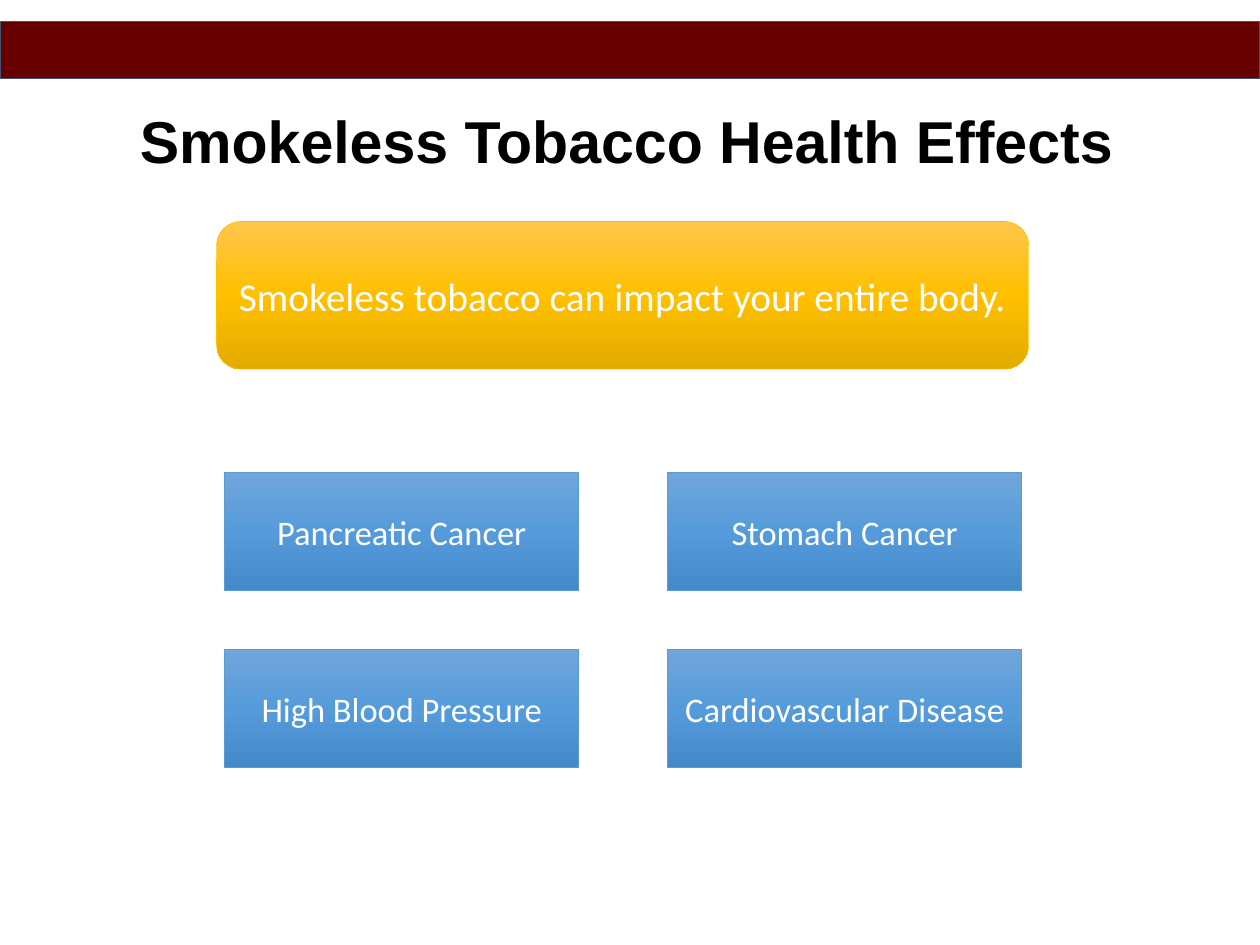
"""Builds the slide on the health effects of smokeless tobacco."""
from copy import deepcopy

from pptx import Presentation
from pptx import util as u
from pptx.dml.color import RGBColor
from pptx.enum import shapes, text
from pptx.oxml.ns import qn

EMU_PER_PX = 10160
WIDTH, HEIGHT = 1280, 960

BLACK = RGBColor(0x00, 0x00, 0x00)
WHITE = RGBColor(0xFF, 0xFF, 0xFF)
MAROON = RGBColor(0x66, 0x00, 0x00)
SLATE = RGBColor(0x44, 0x54, 0x6A)
GOLD = RGBColor(0xFF, 0xC0, 0x00)
BLUE = RGBColor(0x5B, 0x9B, 0xD5)
GOLD_SHADES = (RGBColor(0xFF, 0xC6, 0x4B), GOLD, RGBColor(0xE3, 0xAB, 0x00))
BLUE_SHADES = (
    RGBColor(0x71, 0xA6, 0xDB),
    RGBColor(0x55, 0x9B, 0xDB),
    RGBColor(0x44, 0x8A, 0xCA),
)

EFFECTS = (
    ("Pancreatic Cancer", "Stomach Cancer"),
    ("High Blood Pressure", "Cardiovascular Disease"),
)
GRID_LEFT, GRID_TOP = 228, 480
BOX_WIDTH, BOX_HEIGHT = 360, 120
COLUMN_STEP, ROW_STEP = 450, 180


def px(*lengths):
    return [u.Emu(length * EMU_PER_PX) for length in lengths]


class SlideBuilder:
    """Draws styled elements on one slide."""

    title_font = "Arial"
    body_font = "Calibri"

    def __init__(self, slide):
        self.slide = slide

    def set_text(self, frame, words, font, size, color, bold=False):
        frame.vertical_anchor = text.MSO_ANCHOR.MIDDLE
        paragraph = frame.paragraphs[0]
        paragraph.text = words
        paragraph.alignment = text.PP_ALIGN.CENTER
        paragraph.font.name = font
        paragraph.font.size = u.Pt(size)
        paragraph.font.color.rgb = color
        paragraph.font.bold = bold

    def title(self, words, *box):
        frame = self.slide.shapes.add_textbox(*px(*box)).text_frame
        frame.word_wrap = False
        frame.auto_size = text.MSO_AUTO_SIZE.SHAPE_TO_FIT_TEXT
        inset = px(5)[0]
        frame.margin_left = frame.margin_right = inset
        frame.margin_top = frame.margin_bottom = inset
        self.set_text(frame, words, self.title_font, 48, BLACK, bold=True)

    def outlined(self, kind, box, line_color, line_width):
        shape = self.slide.shapes.add_shape(kind, *px(*box))
        shape.shadow.inherit = False
        shape.line.color.rgb = line_color
        shape.line.width = u.Pt(line_width)
        return shape

    def bar(self, *box):
        shape = self.outlined(shapes.MSO_SHAPE.RECTANGLE, box, SLATE, 0.75)
        shape.fill.solid()
        shape.fill.fore_color.rgb = MAROON

    def panel(self, words, kind, box, shades, line_color, size):
        shape = self.outlined(kind, box, line_color, 0.5)
        shape.fill.gradient()
        shape.fill.gradient_angle = 270
        stop_list = next(shape.element.iter(qn("a:gsLst")))
        stop_list.append(deepcopy(stop_list[-1]))
        for index, (stop, shade) in enumerate(zip(shape.fill.gradient_stops, shades)):
            stop.position = index / 2
            stop.color.rgb = shade
        self.set_text(shape.text_frame, words, self.body_font, size, WHITE)


def main():
    presentation = Presentation()
    presentation.slide_width, presentation.slide_height = px(WIDTH, HEIGHT)
    builder = SlideBuilder(presentation.slides.add_slide(presentation.slide_layouts[6]))

    builder.title("Smokeless Tobacco Health Effects ", 129, 101, 1032, 83)
    builder.bar(0, 22, WIDTH, 58)
    builder.panel(
        "Smokeless tobacco can impact your entire body.",
        shapes.MSO_SHAPE.ROUNDED_RECTANGLE,
        (220, 225, 825, 150), GOLD_SHADES, GOLD, 32,
    )
    for row, effects in enumerate(EFFECTS):
        for column, effect in enumerate(effects):
            box = (
                GRID_LEFT + column * COLUMN_STEP,
                GRID_TOP + row * ROW_STEP,
                BOX_WIDTH,
                BOX_HEIGHT,
            )
            builder.panel(effect, shapes.MSO_SHAPE.RECTANGLE, box, BLUE_SHADES, BLUE, 28)

    presentation.save("out.pptx")


if __name__ == "__main__":
    main()
